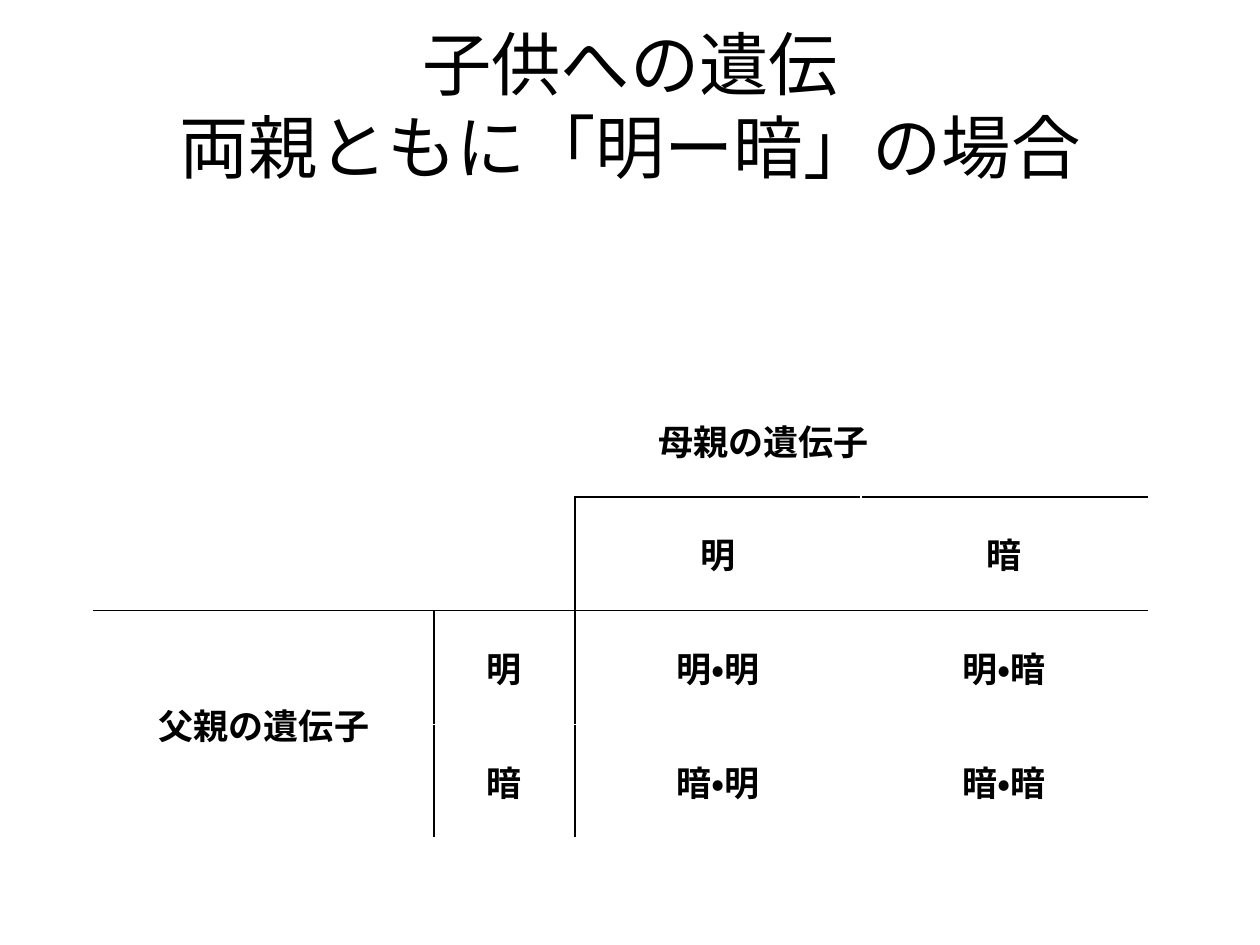
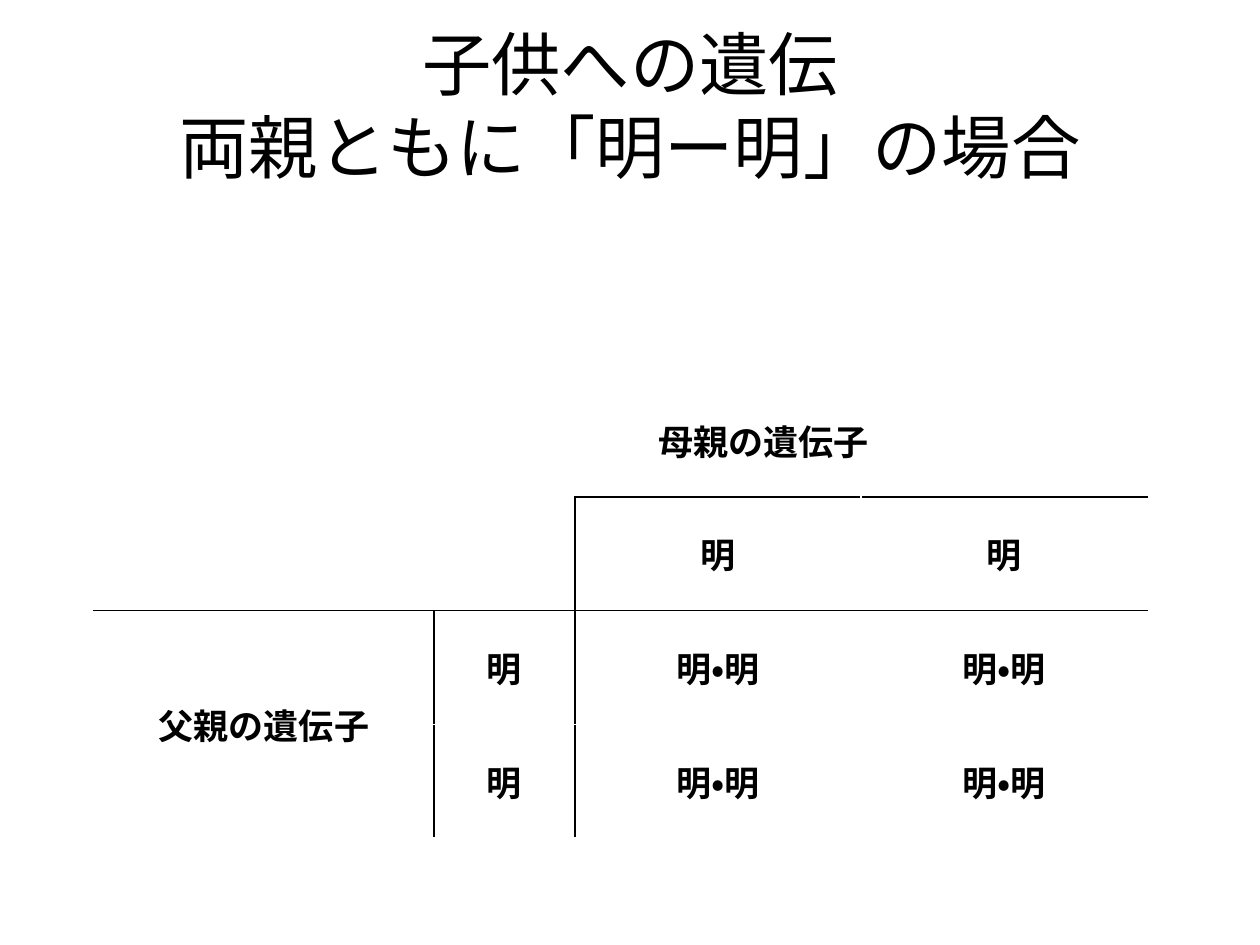
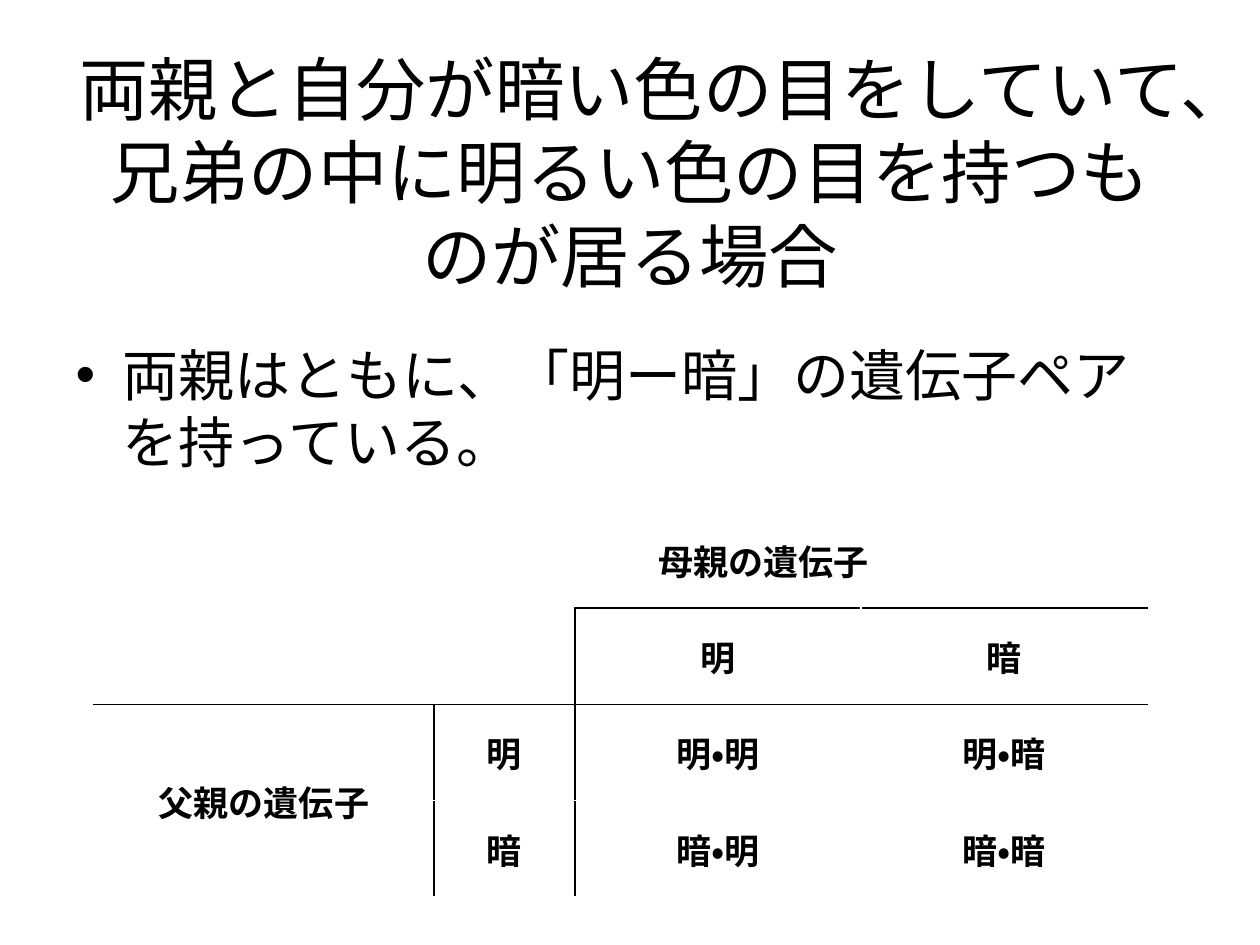
from pptx import Presentation
from pptx.dml.color import RGBColor
from pptx.enum.lang import MSO_LANGUAGE_ID as Lang
from pptx.enum.text import MSO_ANCHOR as Anchor, MSO_AUTO_SIZE as AutoSize, PP_ALIGN as Align
from pptx.oxml.ns import qn
from pptx.util import Emu, Pt
from lxml.etree import SubElement

PX_PER_INCH = 126
BLACK, WHITE = "000000", "FFFFFF"
FONT = "Calibri"
TITLE_ONLY, TITLE_AND_BODY = 5, 1
MARGIN, CONTENT_WIDTH = 63, 1134
TITLE_TOP = 38
INSET = 6
COLUMN_WIDTHS = (286, 54, 141, 286, 286)
TABLE_LEFT = 94
ROW_COUNT = 4
MERGES = (((0, 1), (0, 4)), ((1, 0), (1, 2)), ((2, 0), (3, 1)))


def px(length):
    return Emu(round(length * 914400 / PX_PER_INCH))


def color(hex_value):
    return RGBColor.from_string(hex_value)


def style(paragraph, size, bold=False, align=None):
    font = paragraph.font
    font.name, font.size, font.bold = FONT, Pt(size), bold
    font.color.rgb = color(BLACK)
    font.language_id = Lang.JAPANESE
    paragraph.alignment = align


def fill_placeholder(holder, text, top, height, size, align=None):
    holder.left, holder.top = px(MARGIN), px(top)
    holder.width, holder.height = px(CONTENT_WIDTH), px(height)
    frame = holder.text_frame
    frame.auto_size = AutoSize.NONE
    frame.text = text
    style(frame.paragraphs[0], size, align=align)
    return frame


def add_title(slide, text, height, space_below=0):
    frame = fill_placeholder(slide.shapes.title, text, TITLE_TOP, height, 39.6, Align.CENTER)
    frame.vertical_anchor = Anchor.MIDDLE
    frame.margin_bottom = px(INSET + space_below)


def vertical_color(row, boundary):
    ruled = (boundary == 3 and row >= 1) or (boundary == 2 and row >= 2)
    return BLACK if ruled else WHITE


def horizontal_color(column, boundary):
    ruled = boundary == 2 or (boundary == 1 and column >= 3)
    return BLACK if ruled else WHITE


def add_border(cell, side, hex_value):
    line = SubElement(cell._tc.get_or_add_tcPr(), qn(f"a:{side}"), w=str(Pt(1)))
    SubElement(SubElement(line, qn("a:solidFill")), qn("a:srgbClr"), val=hex_value)


def rule_cell(cell, row, column):
    add_border(cell, "lnL", vertical_color(row, column))
    add_border(cell, "lnR", vertical_color(row, column + cell.span_width))
    add_border(cell, "lnT", horizontal_color(column, row))
    if row > 0:
        add_border(cell, "lnB", horizontal_color(column, row + cell.span_height))
    cell.fill.solid()
    cell.fill.fore_color.rgb = color(WHITE)


def write_cell(cell, text):
    cell.text = text
    cell.vertical_anchor = Anchor.MIDDLE
    style(cell.text_frame.paragraphs[0], 20, bold=True, align=Align.CENTER)


def add_inheritance_table(slide, genes, top, height):
    table = slide.shapes.add_table(
        ROW_COUNT, len(COLUMN_WIDTHS), px(TABLE_LEFT), px(top),
        px(sum(COLUMN_WIDTHS)), px(height)).table
    for column, width in zip(table.columns, COLUMN_WIDTHS):
        column.width = px(width)
    for row in table.rows:
        row.height = px(height / ROW_COUNT)
    for first, last in MERGES:
        table.cell(*first).merge(table.cell(*last))
    for row in range(ROW_COUNT):
        for column in range(len(COLUMN_WIDTHS)):
            rule_cell(table.cell(row, column), row, column)

    write_cell(table.cell(0, 1), "母親の遺伝子")
    write_cell(table.cell(2, 0), "父親の遺伝子")
    for column, mother in enumerate(genes, 3):
        write_cell(table.cell(1, column), mother)
    for row, father in enumerate(genes, 2):
        write_cell(table.cell(row, 2), father)
        for column, mother in enumerate(genes, 3):
            write_cell(table.cell(row, column), f"{father}・{mother}")


def add_parents_slide(deck, genes):
    slide = deck.slides.add_slide(deck.slide_layouts[TITLE_ONLY])
    pair = "ー".join(genes)
    add_title(slide, f"子供への遺伝\v両親ともに「{pair}」の場合", 216, space_below=83)
    add_inheritance_table(slide, genes, 383, 455)


def add_siblings_slide(deck):
    slide = deck.slides.add_slide(deck.slide_layouts[TITLE_AND_BODY])
    add_title(slide, "両親と自分が暗い色の目をしていて、兄弟の中に明るい色の目を持つものが居る場合", 266)
    fill_placeholder(slide.placeholders[1],
                     "両親はともに、「明ー暗」の遺伝子ペアを持っている。", 334, 198, 32)
    add_inheritance_table(slide, "明暗", 512, 385)


def main():
    deck = Presentation()
    deck.slide_width, deck.slide_height = px(1260), px(945)
    add_parents_slide(deck, "明暗")
    add_parents_slide(deck, "明明")
    add_siblings_slide(deck)
    deck.save("out.pptx")


if __name__ == "__main__":
    main()
